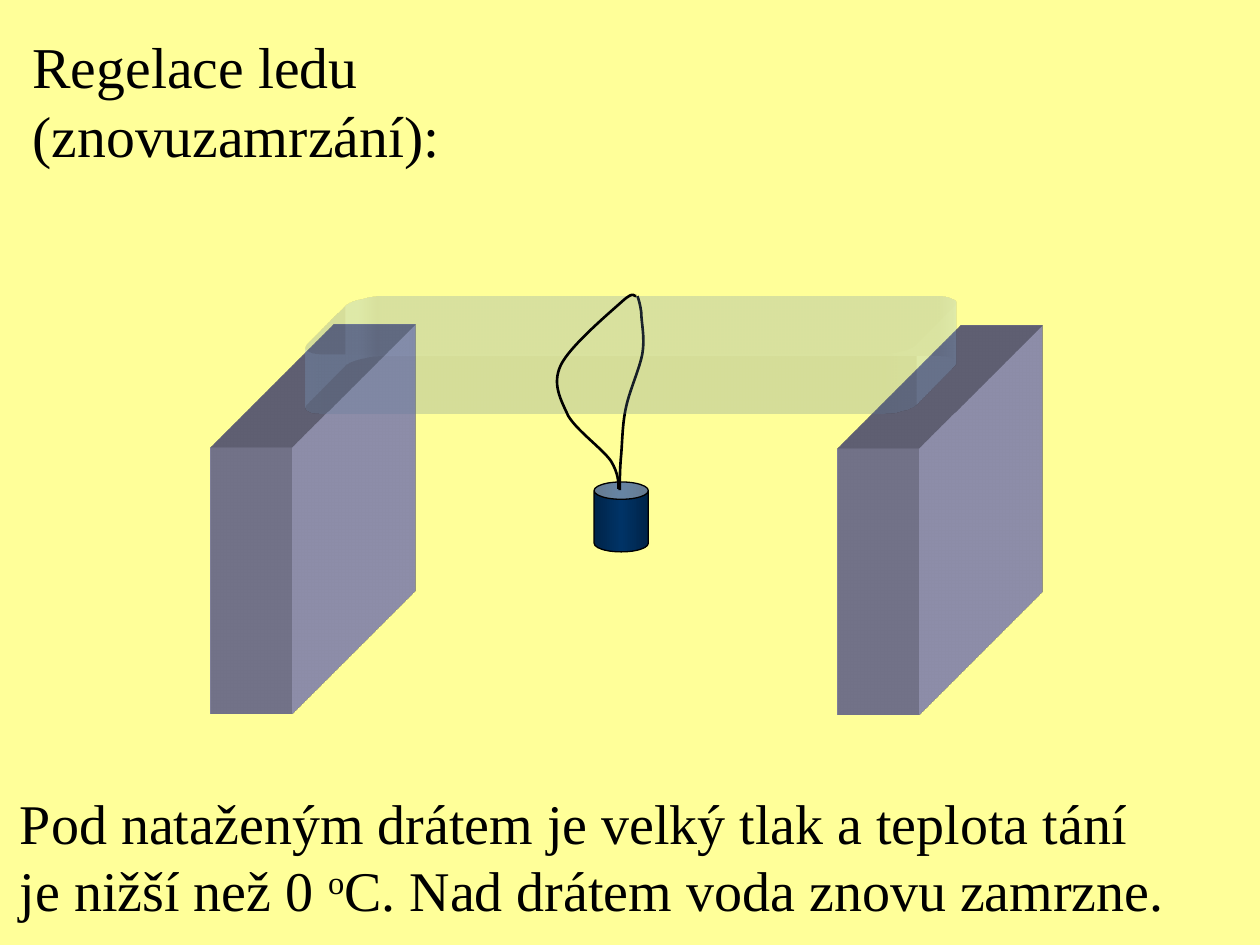
from copy import deepcopy

from pptx import Presentation
from pptx.dml.color import RGBColor
from pptx.enum.shapes import MSO_SHAPE as Shape
from pptx.enum.text import MSO_ANCHOR as Anchor, MSO_AUTO_SIZE as AutoSize, PP_ALIGN as Align
from pptx.oxml import parse_xml
from pptx.oxml.ns import nsdecls, qn
from pptx.util import Pt

# Content
TITLE = "Regelace ledu (znovuzamrzání):"
EXPLANATION = [
    [("Pod nataženým drátem je velký tlak a teplota tání", False)],
    [("je nižší než 0 ", False), ("o", True), ("C. Nad drátem voda znovu zamrzne.", False)],
]

FONT = "Times New Roman"
BLACK = RGBColor(0x00, 0x00, 0x00)
PAPER = RGBColor(0xFF, 0xFF, 0x99)
STONE = RGBColor(0xA1, 0xA1, 0xC1)
ICE = RGBColor(0x99, 0xCC, 0xFF)
NAVY = RGBColor(0x00, 0x33, 0x66)
DARK_NAVY = RGBColor(0x00, 0x24, 0x49)

# Geometry in points
PILLARS = [(478.8, 256.2), (120.2, 255.6)]
PILLAR_W, PILLAR_H, PILLAR_DEPTH = 46.8, 152, 199
ICE_BOX, ICE_DEPTH = (186.5, 139.7, 348.5, 92.9), 33.9
# Bezier wires: start point, then two control points and an end point each
BACK_WIRE = [(364.3, 169.2), (365, 171.4), (365.8, 173.5), (366.5, 178.6),
             (366.5, 184.3), (368.6, 192.2), (367.2, 201.6),
             (365.8, 210.2), (360, 222.5), (357.8, 232.6),
             (355.7, 241.9), (355.7, 252), (355, 259.9),
             (354.2, 267.8), (354.2, 275.8), (354.2, 280.1)]
FRONT_WIRE = [(363.6, 169.2), (362.2, 169.9), (362.9, 165.6), (355.7, 172.1),
              (348.5, 178.6), (325.4, 198), (320.4, 208.8),
              (315.4, 219.6), (320.4, 228.2), (324.7, 237.6),
              (329.8, 246.2), (344.2, 256.3), (349.2, 263.5),
              (353.5, 270.7), (353.5, 275.8), (353.5, 279.4)]


def set_frame(placeholder, left, top, width, height, right_inset):
    placeholder.left, placeholder.top = Pt(left), Pt(top)
    placeholder.width, placeholder.height = Pt(width), Pt(height)
    frame = placeholder.text_frame
    frame.margin_left, frame.margin_right = Pt(4.2), Pt(right_inset)
    frame.margin_top = frame.margin_bottom = Pt(3.4)
    frame.vertical_anchor = Anchor.TOP
    frame.auto_size = AutoSize.NONE
    frame.word_wrap = True
    return frame


def format_paragraph(paragraph, size):
    paragraph.alignment = Align.LEFT
    paragraph.space_before = Pt(0)
    paragraph.font.name, paragraph.font.size = FONT, Pt(size)
    paragraph.font.color.rgb = BLACK


def add_wire(nodes):
    builder = slide.shapes.build_freeform(*map(Pt, nodes[0]))
    builder.add_line_segments([tuple(map(Pt, node)) for node in nodes[1:]], close=False)
    wire = builder.convert_to_shape()
    # Every three line segments become one cubic curve
    segments = list(wire._element.iter(qn("a:lnTo")))
    for start in range(0, len(segments), 3):
        curve = segments[start].makeelement(qn("a:cubicBezTo"), {})
        segments[start].addprevious(curve)
        for segment in segments[start:start + 3]:
            curve.append(segment[0])
            segment.getparent().remove(segment)
    wire.shadow.inherit = False
    wire.fill.background()
    wire.line.color.rgb, wire.line.width = BLACK, Pt(1.5)


def add_block(kind, box, color, depth, tilt=0):
    block = slide.shapes.add_shape(kind, *map(Pt, box))
    block.shadow.inherit = False
    block.fill.solid()
    block.fill.fore_color.rgb = color
    block.line.fill.background()
    properties = block._element.spPr
    properties.append(parse_xml(
        f'<a:scene3d {nsdecls("a")}><a:camera prst="legacyObliqueTopRight">'
        f'<a:rot lat="{tilt * 60000}" lon="0" rev="0"/></a:camera>'
        '<a:lightRig rig="legacyFlat3" dir="b"/></a:scene3d>'))
    properties.append(parse_xml(
        f'<a:sp3d {nsdecls("a")} extrusionH="{Pt(depth)}" prstMaterial="legacyMatte">'
        f'<a:extrusionClr><a:srgbClr val="{color}"/></a:extrusionClr></a:sp3d>'))
    return block


prs = Presentation()
prs.slide_width, prs.slide_height = Pt(720), Pt(540)
slide = prs.slides.add_slide(prs.slide_layouts[1])
slide.background.fill.solid()
slide.background.fill.fore_color.rgb = PAPER

# Title; the wide right inset puts the bracketed word on its own line
title = set_frame(slide.shapes.title, 14.4, 14.2, 438, 46.8, 60)
title.text = TITLE
format_paragraph(title.paragraphs[0], 33)

# Explanation without bullets
body = set_frame(slide.placeholders[1], 7.2, 447.1, 667, 84, 0)
for number, runs in enumerate(EXPLANATION):
    paragraph = body.add_paragraph() if number else body.paragraphs[0]
    for text, raised in runs:
        run = paragraph.add_run()
        run.text = text
        if raised:
            run.font._element.set("baseline", "30000")
    format_paragraph(paragraph, 32)
    properties = paragraph._p.get_or_add_pPr()
    properties.set("marL", "0")
    properties.set("indent", "0")
    properties.append(properties.makeelement(qn("a:buNone"), {}))

# Weight with a three-stop gradient
weight = slide.shapes.add_shape(Shape.CAN, Pt(339.5), Pt(275.4), Pt(31), Pt(40))
weight.adjustments[0] = 0.32
weight.shadow.inherit = False
weight.fill.gradient()
weight.fill.gradient_angle = 0
stop_list = weight._element.spPr.find(qn("a:gradFill")).find(qn("a:gsLst"))
stop_list.append(deepcopy(stop_list[0]))
for stop, position, color in zip(weight.fill.gradient_stops, (0, 0.5, 1),
                                 (DARK_NAVY, NAVY, DARK_NAVY)):
    stop.position, stop.color.rgb = position, color
weight.line.color.rgb, weight.line.width = BLACK, Pt(0.75)

# Wire behind the ice, pillars, ice block lying flat, wire in front
add_wire(BACK_WIRE)
for left, top in PILLARS:
    add_block(Shape.RECTANGLE, (left, top, PILLAR_W, PILLAR_H), STONE, PILLAR_DEPTH)
ice = add_block(Shape.ROUNDED_RECTANGLE, ICE_BOX, ICE, ICE_DEPTH, tilt=270)
ice_color = ice.fill._xPr.find(qn("a:solidFill"))[0]
ice_color.append(ice_color.makeelement(qn("a:alpha"), {"val": "14000"}))
add_wire(FRONT_WIRE)

prs.save("out.pptx")
